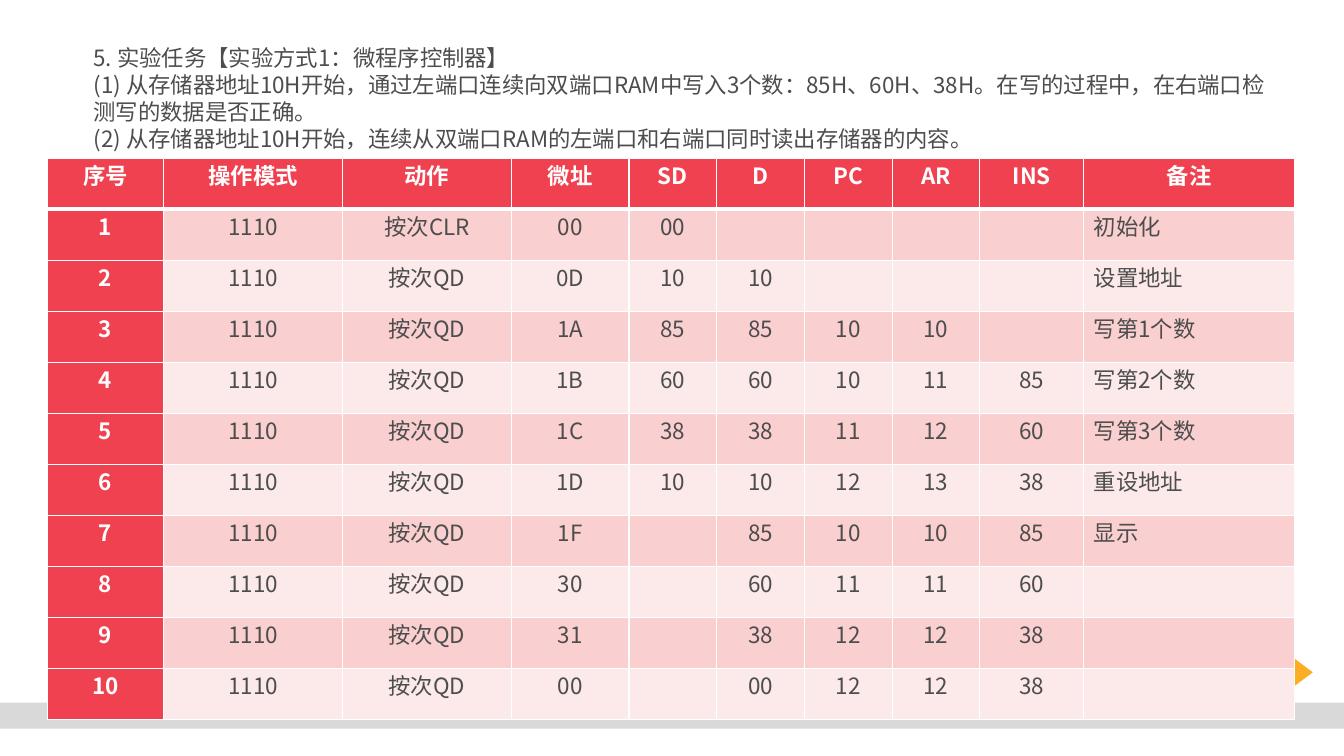
"""Builds the dual-port RAM experiment slide with its step table."""
from lxml.etree import SubElement
from pptx import Presentation
from pptx.dml.color import RGBColor
from pptx.enum.shapes import MSO_SHAPE
from pptx.enum.text import PP_ALIGN
from pptx.oxml.ns import qn
from pptx.util import Inches, Pt

WHITE = RGBColor(0xFF, 0xFF, 0xFF)
GREY = RGBColor(0xD9, 0xD9, 0xD9)
ORANGE = RGBColor(0xFB, 0xAD, 0x24)
INK = RGBColor(0x4D, 0x4D, 0x4D)
RED = RGBColor(0xEF, 0x41, 0x50)
PINK = RGBColor(0xF9, 0xCF, 0xD0)
PALE = RGBColor(0xFC, 0xE9, 0xE9)
FONT = "Noto Sans CJK SC"

TASK = [
    "5. 实验任务【实验方式1：微程序控制器】",
    "(1) 从存储器地址10H开始，通过左端口连续向双端口RAM中写入3个数：85H、60H、38H。在写的过程中，在右端口检测写的数据是否正确。",
    "(2) 从存储器地址10H开始，连续从双端口RAM的左端口和右端口同时读出存储器的内容。",
]
HEADINGS = ["序号", "操作模式", "动作", "微址", "SD", "D", "PC", "AR", "INS", "备注"]
STEPS = [
    ["按次CLR", "00", "00", "", "", "", "", "初始化"],
    ["按次QD", "0D", "10", "10", "", "", "", "设置地址"],
    ["按次QD", "1A", "85", "85", "10", "10", "", "写第1个数"],
    ["按次QD", "1B", "60", "60", "10", "11", "85", "写第2个数"],
    ["按次QD", "1C", "38", "38", "11", "12", "60", "写第3个数"],
    ["按次QD", "1D", "10", "10", "12", "13", "38", "重设地址"],
    ["按次QD", "1F", "", "85", "10", "10", "85", "显示"],
    ["按次QD", "30", "", "60", "11", "11", "60", ""],
    ["按次QD", "31", "", "38", "12", "12", "38", ""],
    ["按次QD", "00", "", "00", "12", "12", "38", ""],
]
ROWS = [HEADINGS] + [[str(n), "1110", *step] for n, step in enumerate(STEPS, 1)]
WIDTHS = [1.15, 1.78, 1.67, 1.17, 0.87, 0.87, 0.87, 0.87, 1.03, 2.09]
NOTE_COLUMN = len(HEADINGS) - 1


def format_runs(paragraph, color, bold=False):
    for run in paragraph.runs:
        run.font.name = FONT
        run.font.size = Pt(16)
        run.font.bold = bold
        run.font.color.rgb = color
        SubElement(run.font._element, qn("a:ea"), typeface=FONT)


def add_border(cell, side, points):
    line = SubElement(cell._tc.get_or_add_tcPr(), qn(f"a:{side}"), w=str(Pt(points)))
    fill = SubElement(line, qn("a:solidFill"))
    SubElement(fill, qn("a:srgbClr"), val=str(WHITE))


presentation = Presentation()
presentation.slide_width = Inches(13.33)
presentation.slide_height = Inches(7.5)
slide = presentation.slides.add_slide(presentation.slide_layouts[6])

for preset, left, top, width, height, color in [
    (MSO_SHAPE.RECTANGLE, 0, 6.97, 13.33, 0.26, GREY),
    (MSO_SHAPE.FLOWCHART_DECISION, 12.17, 6.35, 0.85, 0.64, ORANGE),
]:
    footer = slide.shapes.add_shape(
        preset, Inches(left), Inches(top), Inches(width), Inches(height))
    footer.shadow.inherit = False
    footer.fill.solid()
    footer.fill.fore_color.rgb = color
    footer.line.fill.background()

task = slide.shapes.add_textbox(Inches(0.83), Inches(0.39), Inches(11.88), Inches(1.18))
task.text_frame.word_wrap = True
task.text_frame.text = "\n".join(TASK)
for paragraph in task.text_frame.paragraphs:
    paragraph.line_spacing = Pt(19.3)
    format_runs(paragraph, INK)

steps = slide.shapes.add_table(
    len(ROWS), len(HEADINGS),
    Inches(0.47), Inches(1.57), Inches(sum(WIDTHS)), Inches(5.57)).table
for column, width in zip(steps.columns, WIDTHS):
    column.width = Inches(width)

for r, values in enumerate(ROWS):
    steps.rows[r].height = Inches(5.57 / len(ROWS))
    for c, value in enumerate(values):
        cell = steps.cell(r, c)
        emphasized = r == 0 or c == 0
        cell.margin_left = cell.margin_right = Inches(0.1)
        cell.margin_top = cell.margin_bottom = 0
        add_border(cell, "lnL", 1)
        add_border(cell, "lnR", 1)
        add_border(cell, "lnT", 3 if r == 1 else 1)
        add_border(cell, "lnB", 3 if r == 0 else 1)
        cell.fill.solid()
        cell.fill.fore_color.rgb = RED if emphasized else PINK if r % 2 else PALE
        cell.text_frame.text = value
        paragraph = cell.text_frame.paragraphs[0]
        is_note = r > 0 and c == NOTE_COLUMN
        paragraph.alignment = PP_ALIGN.LEFT if is_note else PP_ALIGN.CENTER
        format_runs(paragraph, WHITE if emphasized else INK, emphasized)

presentation.save("out.pptx")
